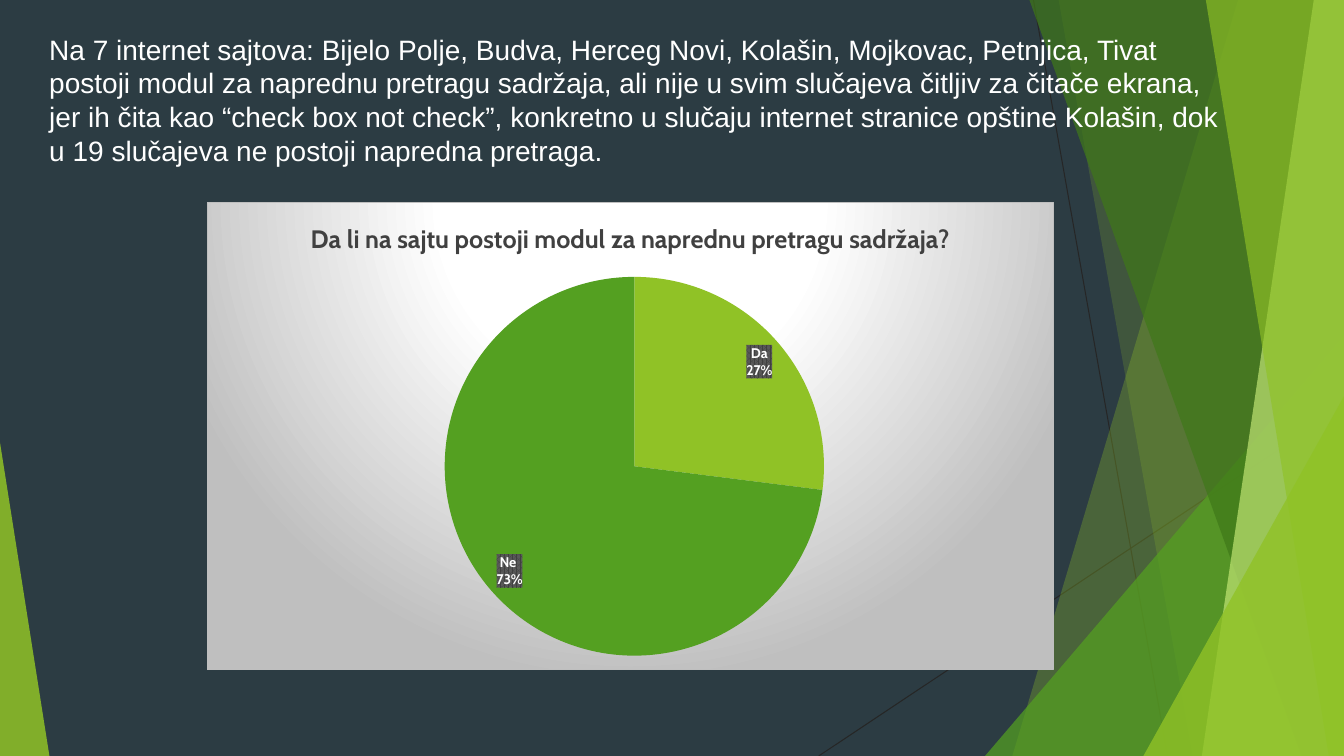
from pptx import Presentation
from pptx.chart.data import CategoryChartData
from pptx.dml.color import RGBColor
from pptx.enum.chart import XL_CHART_TYPE, XL_LABEL_POSITION
from pptx.enum.shapes import MSO_CONNECTOR, MSO_SHAPE
from pptx.enum.text import MSO_AUTO_SIZE
from pptx.oxml import parse_xml
from pptx.oxml.ns import nsdecls, qn
from pptx.util import Inches, Pt
from lxml.etree import SubElement

COLORS = {
    "background": "2C3C43", "hairline": "262626", "white": "FFFFFF",
    "lime": "90C226", "green": "54A021", "forest": "3F7819", "pale": "C0E474",
    "silver": "BFBFBF", "charcoal": "404040", "gray": "595959",
}
WIDTH, HEIGHT = 13.33, 7.5
QUESTION = "Da li na sajtu postoji modul za naprednu pretragu sadržaja?"
FINDING = (
    "Na 7 internet sajtova: Bijelo Polje, Budva, Herceg Novi, Kolašin, Mojkovac, "
    "Petnjica, Tivat postoji modul za naprednu pretragu sadržaja, ali nije u svim "
    "slučajeva čitljiv za čitače ekrana, jer ih čita kao “check box not check”, "
    "konkretno u slučaju internet stranice opštine Kolašin, dok u 19 slučajeva ne "
    "postoji napredna pretraga."
)


def rgb(name):
    return RGBColor.from_string(COLORS[name])


class SlideBuilder:
    """Draws styled elements on one slide."""

    def __init__(self, slide):
        self.slide = slide
        slide.background.fill.solid()
        slide.background.fill.fore_color.rgb = rgb("background")

    def style_font(self, font, face, size, color, bold=False):
        font.name, font.size, font.bold = face, Pt(size), bold
        font.color.rgb = rgb(color)

    def hairline(self, start, end):
        line = self.slide.shapes.add_connector(
            MSO_CONNECTOR.STRAIGHT, *map(Inches, start + end))
        line.line.color.rgb = rgb("hairline")
        line.line.width = Pt(0.75)
        SubElement(line._element.spPr, qn("a:effectLst"))

    def tint(self, shape, color, opacity):
        shape.shadow.inherit = False
        shape.line.fill.background()
        shape.fill.solid()
        shape.fill.fore_color.rgb = rgb(color)
        fill_color = shape._element.spPr.find(".//" + qn("a:srgbClr"))
        SubElement(fill_color, qn("a:alpha"), val=str(opacity * 1000))

    def band(self, top_left, bottom_left, color, opacity):
        corners = [(WIDTH, 0), (WIDTH, HEIGHT), (bottom_left, HEIGHT)]
        outline = self.slide.shapes.build_freeform(Inches(top_left), 0)
        outline.add_line_segments([(Inches(x), Inches(y)) for x, y in corners])
        self.tint(outline.convert_to_shape(), color, opacity)

    def triangle(self, left, right, top, apex, color, opacity):
        wedge = self.slide.shapes.add_shape(
            MSO_SHAPE.ISOSCELES_TRIANGLE, Inches(left), Inches(top),
            Inches(right - left), Inches(HEIGHT - top))
        wedge.adjustments[0] = apex
        self.tint(wedge, color, opacity)

    def text(self, wording, left, top, width, height):
        frame = self.slide.shapes.add_textbox(
            *map(Inches, (left, top, width, height))).text_frame
        frame.word_wrap = True
        frame.auto_size = MSO_AUTO_SIZE.NONE
        frame.text = wording
        self.style_font(frame.paragraphs[0].font, "Arial", 20, "white")

    def pie(self, title, shares, left, top, width, height):
        answers = CategoryChartData()
        answers.categories = list(shares)
        answers.add_series(title, [share for share, _ in shares.values()])
        chart = self.slide.shapes.add_chart(
            XL_CHART_TYPE.PIE, *map(Inches, (left, top, width, height)), answers).chart
        chart.has_legend = False
        self.style_font(chart.font, "Cabin", 10, "white")
        chart.has_title = True
        chart.chart_title.include_in_layout = False
        chart.chart_title.text_frame.text = title
        heading = chart.chart_title.text_frame.paragraphs[0]
        self.style_font(heading.font, "Cabin", 18, "charcoal", True)

        plot = chart.plots[0]
        plot.vary_by_categories = True
        for index, (_, color) in enumerate(shares.values()):
            wedge = plot.series[0].points[index].format
            wedge.fill.solid()
            wedge.fill.fore_color.rgb = rgb(color)
            wedge.line.fill.background()
        plot.has_data_labels = True
        labels = plot.data_labels
        labels.show_value = False
        labels.show_category_name = labels.show_percentage = True
        labels.number_format, labels.number_format_is_linked = "0%", False
        labels.position = XL_LABEL_POSITION.INSIDE_END
        self.style_font(labels.font, "Cabin", 10, "white", True)
        self.decorate_pie(chart._chartSpace, labels._element)

    def decorate_pie(self, chart_space, labels):
        namespaces = nsdecls("c", "a")
        labels.find(qn("c:txPr")).addprevious(parse_xml(
            f'<c:spPr {namespaces}><a:pattFill prst="pct75">'
            f'<a:fgClr><a:srgbClr val="{COLORS["charcoal"]}"/></a:fgClr>'
            f'<a:bgClr><a:srgbClr val="{COLORS["gray"]}"/></a:bgClr>'
            '</a:pattFill><a:ln><a:noFill/></a:ln></c:spPr>'))
        separator = parse_xml(f"<c:separator {namespaces}>\n</c:separator>")
        labels.find(qn("c:showPercent")).addnext(separator)
        bubble = labels.find(qn("c:showBubbleSize"))
        if bubble is not None:
            bubble.addnext(separator)

        stops = "".join(
            f'<a:gs pos="{percent * 1000}"><a:srgbClr val="{COLORS[color]}"/></a:gs>'
            for percent, color in [(0, "white"), (39, "white"), (100, "silver")])
        chart_space.find(qn("c:txPr")).addprevious(parse_xml(
            f'<c:spPr {namespaces}><a:gradFill><a:gsLst>{stops}</a:gsLst>'
            '<a:path path="circle"><a:fillToRect l="50000" t="-80000" '
            'r="50000" b="180000"/></a:path></a:gradFill>'
            f'<a:ln w="{Pt(0.75)}"><a:solidFill><a:srgbClr val="{COLORS["silver"]}"/>'
            '</a:solidFill></a:ln></c:spPr>'))

        plot_area = chart_space.find(".//" + qn("c:plotArea"))
        for layout in plot_area.findall(qn("c:layout")):
            plot_area.remove(layout)
        placement = {"x": 0.28, "y": 0.16, "w": 0.45, "h": 0.81}
        sizes = "".join(f'<c:{key} val="{part}"/>' for key, part in placement.items())
        plot_area.insert(0, parse_xml(
            f'<c:layout {namespaces}><c:manualLayout><c:layoutTarget val="inner"/>'
            f'<c:xMode val="edge"/><c:yMode val="edge"/>{sizes}'
            '</c:manualLayout></c:layout>'))


def main():
    deck = Presentation()
    deck.slide_width, deck.slide_height = Inches(WIDTH), Inches(HEIGHT)
    page = SlideBuilder(deck.slides.add_slide(deck.slide_layouts[6]))

    page.hairline((10.25, 0), (11.58, HEIGHT))
    page.hairline((WIDTH, 4.03), (8.12, HEIGHT))
    page.band(12.28, 10.04, "lime", 30)
    page.band(10.5, 11.83, "lime", 20)
    page.triangle(9.77, WIDTH, 3.33, 1, "green", 72)
    page.band(10.21, 12.91, "forest", 70)
    page.band(13.03, 11.92, "pale", 70)
    page.band(11.96, 13.18, "lime", 65)
    page.triangle(11.34, WIDTH, 3.93, 1, "lime", 80)
    page.triangle(0, 0.49, 4.39, 0, "lime", 85)

    page.text(FINDING, 0.39, 0.27, 11.84, 2.05)
    page.pie(QUESTION, {"Da": (27, "lime"), "Ne ": (73, "green")}, 2.05, 2, 8.4, 4.65)
    deck.save("out.pptx")


if __name__ == "__main__":
    main()
